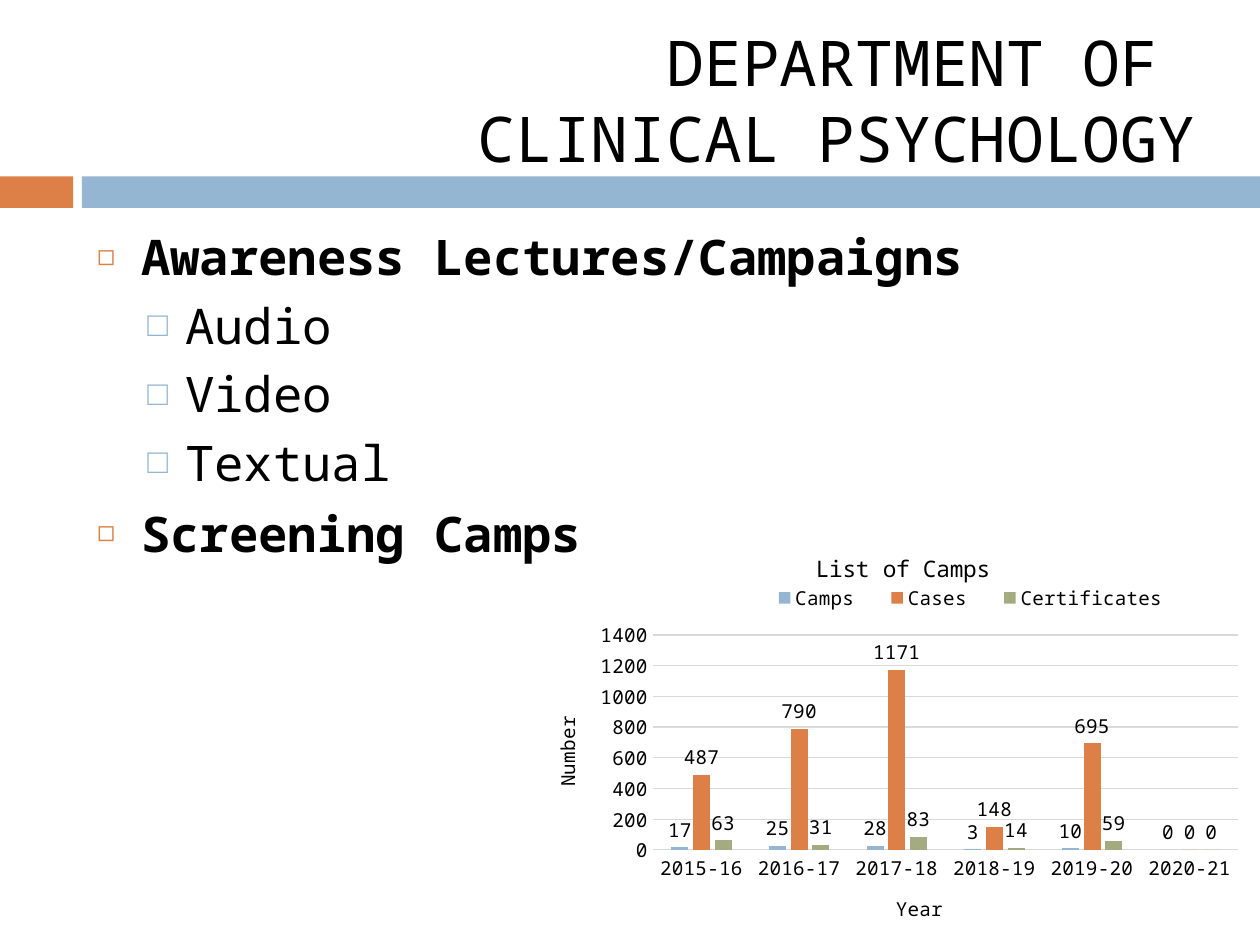
from dataclasses import dataclass

from lxml import etree
from pptx import Presentation
from pptx.chart.data import CategoryChartData
from pptx.dml.color import RGBColor
from pptx.enum.chart import XL_CHART_TYPE, XL_LABEL_POSITION, XL_LEGEND_POSITION, XL_TICK_MARK
from pptx.enum.shapes import MSO_SHAPE
from pptx.enum.text import MSO_ANCHOR, MSO_AUTO_SIZE, PP_ALIGN
from pptx.oxml.ns import qn
from pptx.util import Inches, Pt

COLUMNS = XL_CHART_TYPE.COLUMN_CLUSTERED
OUTSIDE_END = XL_LABEL_POSITION.OUTSIDE_END
LEGEND_BOTTOM = XL_LEGEND_POSITION.BOTTOM
NO_TICK = XL_TICK_MARK.NONE
RECTANGLE = MSO_SHAPE.RECTANGLE
MIDDLE, TOP = MSO_ANCHOR.MIDDLE, MSO_ANCHOR.TOP
NO_AUTOFIT = MSO_AUTO_SIZE.NONE
LEFT, RIGHT = PP_ALIGN.LEFT, PP_ALIGN.RIGHT


@dataclass(frozen=True)
class Theme:
    font: str = "Noto Sans Mono"
    text: str = "000000"
    paper: str = "FFFFFF"
    blue: str = "94B6D2"
    orange: str = "DD8047"
    green: str = "A5AB81"
    grid: str = "D9D9D9"
    title_size: float = 36
    body_size: float = 28
    chart_title_size: float = 13
    chart_size: float = 11


@dataclass(frozen=True)
class Box:
    left: float
    top: float
    width: float
    height: float

    def inches(self) -> tuple:
        return tuple(Inches(v) for v in (self.left, self.top, self.width, self.height))


@dataclass(frozen=True)
class BulletStyle:
    char: str
    color: str
    percent: int
    margin: float
    hanging: float
    space_before: float
    bold: bool


@dataclass(frozen=True)
class Series:
    name: str
    values: tuple
    color: str


THEME = Theme()
BULLETS = (
    BulletStyle("◻", THEME.orange, 60, 0.35, 0.35, 7, True),
    BulletStyle("□", THEME.blue, 70, 0.7, 0.3, 5.5, False),
)
TOPICS = (
    (0, "Awareness Lectures/Campaigns"),
    (1, "Audio"),
    (1, "Video"),
    (1, "Textual"),
    (0, "Screening Camps"),
)
BARS = (
    (Box(0, 1.4, 0.58, 0.25), THEME.orange),
    (Box(0.65, 1.4, 9.35, 0.25), THEME.blue),
)
YEARS = ("2015-16", "2016-17", "2017-18", "2018-19", "2019-20", "2020-21")
CAMP_SERIES = (
    Series("Camps ", (17, 25, 28, 3, 10, 0), THEME.blue),
    Series("Cases ", (487, 790, 1171, 148, 695, 0), THEME.orange),
    Series("Certificates", (63, 31, 83, 14, 59, 0), THEME.green),
)


def format_font(font, size: float, bold: bool = False) -> None:
    font.name, font.size, font.bold = THEME.font, Pt(size), bold
    font.color.rgb = RGBColor.from_string(THEME.text)


def write(paragraph, text: str, *, size: float, bold: bool = False, align=None) -> None:
    paragraph.text = text
    paragraph.alignment = align
    for run in paragraph.runs:
        format_font(run.font, size, bold)


def paint(fill, color: str) -> None:
    fill.solid()
    fill.fore_color.rgb = RGBColor.from_string(color)


def add_bar(slide, box: Box, color: str) -> None:
    bar = slide.shapes.add_shape(RECTANGLE, *box.inches())
    bar.shadow.inherit = False
    paint(bar.fill, color)
    bar.line.fill.background()


def place_text(placeholder, box: Box, anchor):
    """Move a placeholder to its box, in front of everything drawn so far."""
    placeholder.left, placeholder.top, placeholder.width, placeholder.height = box.inches()
    placeholder.element.getparent().append(placeholder.element)
    frame = placeholder.text_frame
    frame.word_wrap, frame.auto_size, frame.vertical_anchor = True, NO_AUTOFIT, anchor
    return frame


def set_bullet(paragraph, style: BulletStyle) -> None:
    paragraph.space_before = Pt(style.space_before)
    props = paragraph._p.get_or_add_pPr()
    props.set("marL", str(Inches(style.margin)))
    props.set("indent", str(-Inches(style.hanging)))
    color = etree.SubElement(props, qn("a:buClr"))
    etree.SubElement(color, qn("a:srgbClr"), val=style.color)
    etree.SubElement(props, qn("a:buSzPct"), val=str(style.percent * 1000))
    etree.SubElement(props, qn("a:buChar"), char=style.char)


def set_layout(parent, index: int, fractions: Box, inner: bool = False) -> None:
    """Give a chart part a fixed place, in fractions of the chart."""
    for old in parent.findall(qn("c:layout")):
        parent.remove(old)
    layout = etree.Element(qn("c:layout"))
    manual = etree.SubElement(layout, qn("c:manualLayout"))
    settings = [("layoutTarget", "inner")] if inner else []
    settings += [("xMode", "edge"), ("yMode", "edge"), ("x", fractions.left),
                 ("y", fractions.top), ("w", fractions.width), ("h", fractions.height)]
    for tag, value in settings:
        etree.SubElement(manual, qn(f"c:{tag}"), val=str(value))
    parent.insert(index, layout)


def format_axis(axis, title: str) -> None:
    write(axis.axis_title.text_frame.paragraphs[0], title, size=THEME.chart_size)
    axis.major_tick_mark = axis.minor_tick_mark = NO_TICK
    format_font(axis.tick_labels.font, THEME.chart_size)


def draw_gray(line) -> None:
    line.color.rgb = RGBColor.from_string(THEME.grid)
    line.width = Pt(0.75)


def add_camps_chart(slide, box: Box) -> None:
    data = CategoryChartData()
    data.categories = YEARS
    for series in CAMP_SERIES:
        data.add_series(series.name, series.values)
    chart = slide.shapes.add_chart(COLUMNS, *box.inches(), data).chart
    format_font(chart.font, THEME.chart_size)
    chart.has_title = True
    write(chart.chart_title.text_frame.paragraphs[0], "List of Camps",
          size=THEME.chart_title_size)

    # Columns and their value labels
    plot = chart.plots[0]
    plot.gap_width, plot.overlap, plot.vary_by_categories = 219, -27, False
    for drawn, series in zip(plot.series, CAMP_SERIES):
        paint(drawn.format.fill, series.color)
        labels = drawn.data_labels
        labels.show_value, labels.position = True, OUTSIDE_END
        format_font(labels.font, THEME.chart_size)

    # Axes
    years, numbers = chart.category_axis, chart.value_axis
    format_axis(years, "Year")
    format_axis(numbers, "Number")
    draw_gray(years.format.line)
    draw_gray(numbers.major_gridlines.format.line)
    numbers.format.line.fill.background()
    numbers.minimum_scale, numbers.maximum_scale, numbers.major_unit = 0, 1400, 200

    # Legend under the title, plot area below it
    chart.has_legend = True
    legend = chart.legend
    legend.position, legend.include_in_layout = LEGEND_BOTTOM, False
    format_font(legend.font, THEME.chart_size)
    set_layout(legend._element, 1, Box(0.3, 0.12, 0.59, 0.08))
    plot_area = chart._chartSpace.chart.plotArea
    set_layout(plot_area, 0, Box(0.15, 0.25, 0.82, 0.52), inner=True)


def main() -> None:
    deck = Presentation()
    deck.slide_width, deck.slide_height = Inches(10), Inches(7.5)
    slide = deck.slides.add_slide(deck.slide_layouts[1])
    paint(slide.background.fill, THEME.paper)
    heading, topics = slide.placeholders

    for box, color in BARS:
        add_bar(slide, box, color)
    add_camps_chart(slide, Box(4.33, 4.22, 5.67, 3.28))

    # Heading
    frame = place_text(heading, Box(0.67, 0.25, 8.92, 1.08), MIDDLE)
    write(frame.paragraphs[0], "DEPARTMENT OF \vCLINICAL PSYCHOLOGY",
          size=THEME.title_size, align=RIGHT)

    # Topic list
    frame = place_text(topics, Box(0.67, 1.75, 8.92, 4.92), TOP)
    for number, (level, text) in enumerate(TOPICS):
        paragraph = frame.add_paragraph() if number else frame.paragraphs[0]
        paragraph.level = level
        style = BULLETS[level]
        write(paragraph, text, size=THEME.body_size, bold=style.bold, align=LEFT)
        set_bullet(paragraph, style)

    deck.save("out.pptx")


if __name__ == "__main__":
    main()
